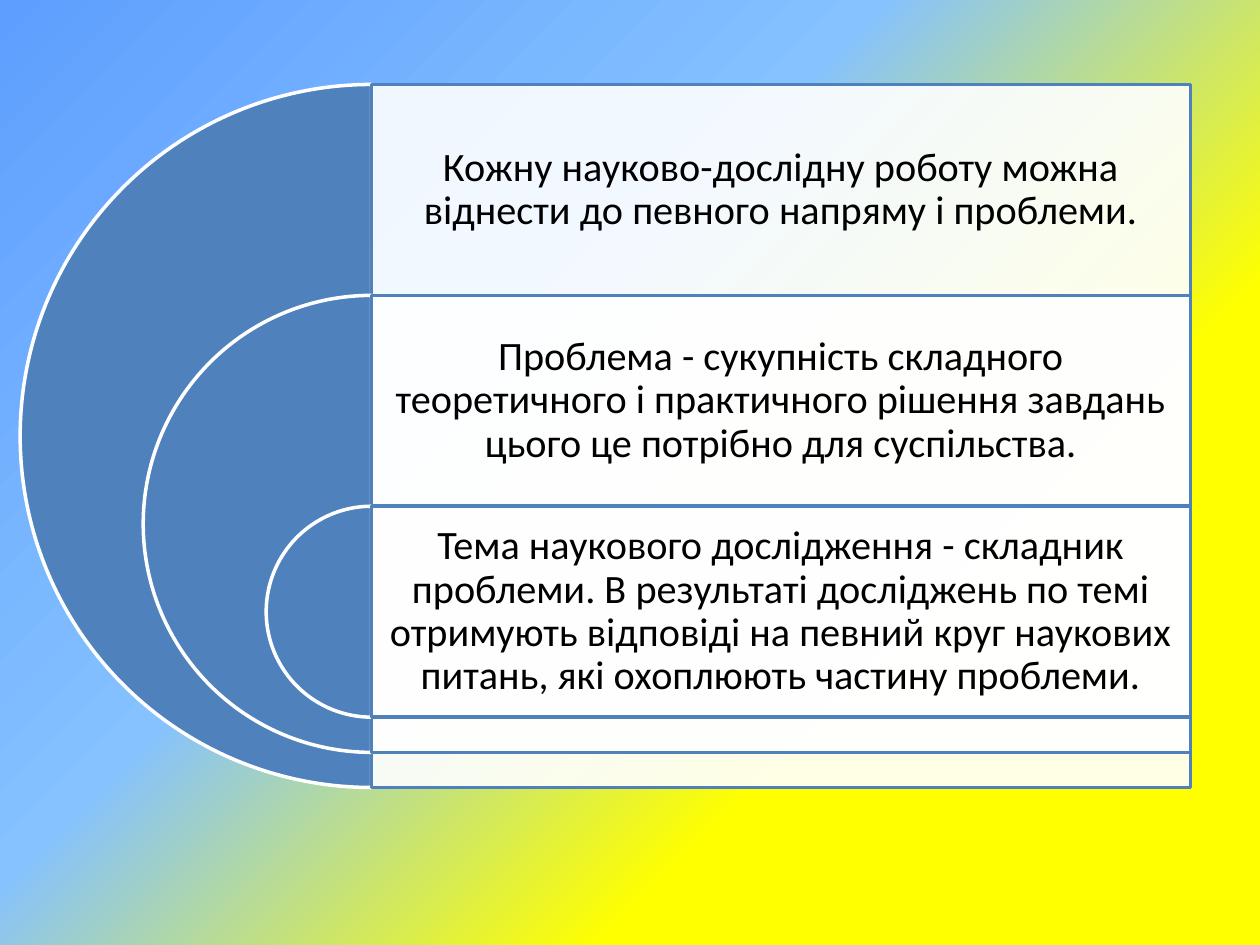
"""Build a slide of three nested half circles with a text panel beside each."""
import pptx
import pptx.util
import pptx.dml.color
import pptx.enum.shapes
import pptx.enum.text
import pptx.oxml
import pptx.oxml.ns
import lxml.etree

Inches = pptx.util.Inches
RGB = pptx.dml.color.RGBColor
SHAPE = pptx.enum.shapes.MSO_SHAPE
WHITE = RGB(0xFF, 0xFF, 0xFF)
BLACK = RGB(0, 0, 0)
BLUE = RGB(0x4F, 0x81, 0xBD)
SKY = RGB(0x5E, 0x9E, 0xFF)
PALE = RGB(0x85, 0xC2, 0xFF)
YELLOW = RGB(0xFF, 0xFF, 0)
STOPS = [(0, SKY), (40, PALE), (70, YELLOW), (100, YELLOW)]
TEXTS = [
    "Кожну науково-дослідну роботу можна віднести до певного напряму і проблеми.",
    "Проблема - сукупність складного теоретичного і практичного рішення завдань "
    "цього це потрібно для суспільства.",
    "Тема наукового дослідження - складник проблеми. В результаті досліджень по темі "
    "отримують відповіді на певний круг наукових питань, які охоплюють частину проблеми.",
]
LEFT, TOP, WIDTH, SIZE = 2.95, 0.67, 6.5, 5.58
ROW = 0.3 * SIZE


def add_sub(parent, tag, **attrs):
    return lxml.etree.SubElement(parent, pptx.oxml.ns.qn(tag), **attrs)


def add_form(kind, left, top, width, height, fill, line):
    form = slide.shapes.add_shape(
        kind, Inches(left), Inches(top), Inches(width), Inches(height))
    form.shadow.inherit = False
    form.fill.solid()
    form.fill.fore_color.rgb = fill
    form.line.color.rgb = line
    form.line.width = pptx.util.Pt(2)
    return form


deck = pptx.Presentation()
deck.slide_width = Inches(10)
deck.slide_height = Inches(7.5)
slide = deck.slides.add_slide(deck.slide_layouts[6])

back = slide.background.fill
back.gradient()
back.gradient_angle = 315
stops = slide.background._cSld.find(".//" + pptx.oxml.ns.qn("a:gsLst"))
for stop in list(stops):
    stops.remove(stop)
for place, color in STOPS:
    stop = add_sub(stops, "a:gs", pos=str(place * 1000))
    add_sub(stop, "a:srgbClr", val=str(color))

for index, text in enumerate(TEXTS):
    top = TOP + index * ROW
    size = SIZE * (1 - 0.35 * index)

    pie = add_form(SHAPE.PIE, LEFT - size / 2, top, size, size, BLUE, WHITE)
    pie.adjustments[0] = 54
    pie.adjustments[1] = 162

    panel = add_form(SHAPE.RECTANGLE, LEFT, top, WIDTH, size, WHITE, BLUE)
    color = panel.fill._xPr.find(".//" + pptx.oxml.ns.qn("a:srgbClr"))
    add_sub(color, "a:alpha", val="90000")

    box = slide.shapes.add_textbox(
        Inches(LEFT), Inches(top), Inches(WIDTH), Inches(ROW))
    frame = box.text_frame
    frame.word_wrap = True
    frame.vertical_anchor = pptx.enum.text.MSO_ANCHOR.MIDDLE
    frame.margin_left = frame.margin_right = Inches(0.1)
    frame.margin_top = frame.margin_bottom = Inches(0.1)
    para = frame.paragraphs[0]
    para.text = text
    para.alignment = pptx.enum.text.PP_ALIGN.CENTER
    para.line_spacing = 0.9
    para.font.name = "Calibri"
    para.font.size = pptx.util.Pt(23)
    para.font.color.rgb = BLACK

deck.save("out.pptx")
